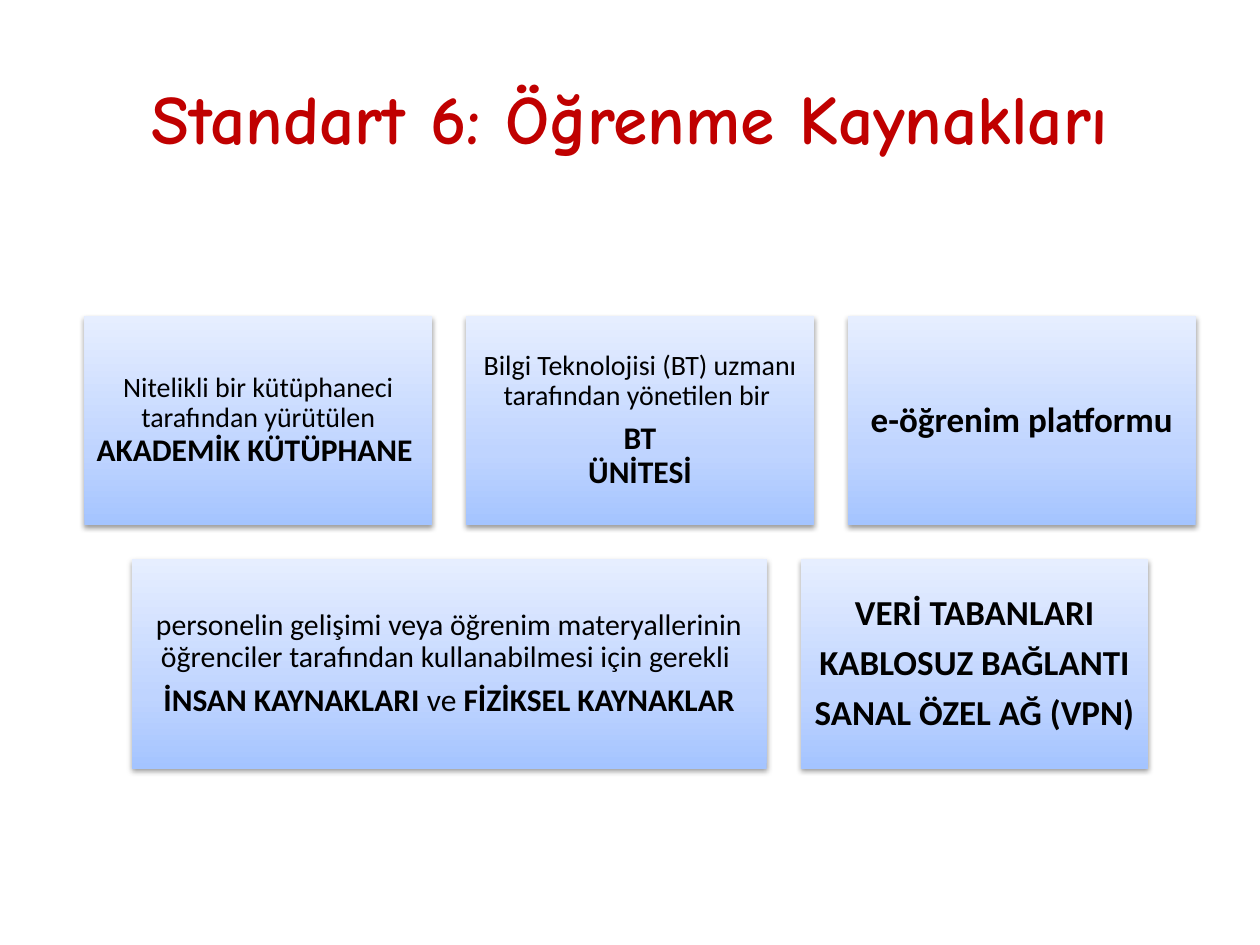
import copy
from typing import NamedTuple

import lxml.etree
import pptx
import pptx.dml.color
import pptx.enum.shapes
import pptx.enum.text
import pptx.oxml
import pptx.oxml.ns
import pptx.util

Inches = pptx.util.Inches
Pt = pptx.util.Pt

COLORS = {
    "title": "C00000",
    "text": "000000",
    "shadow": "000000",
    "bottom": "A4C4FF",
    "middle": "BFD4FF",
    "top": "E6EEFF",
}
GRADIENT = [(0, "bottom"), (0.35, "middle"), (1, "top")]
CENTER, TOP, HEIGHT, GAP = 5.08, 2.51, 1.66, 0.27
NARROW, WIDE = 2.76, 5.04


class Span(NamedTuple):
    text: str
    size: float
    bold: bool = False


class Card(NamedTuple):
    width: float
    inset: float
    paragraphs: list[list[Span]]


ROWS = [
    [
        Card(NARROW, 0.07, [[
            Span("Nitelikli bir kütüphaneci tarafından yürütülen ", 16),
            Span("AKADEMİK KÜTÜPHANE ", 18, True),
        ]]),
        Card(NARROW, 0.07, [
            [Span("Bilgi Teknolojisi (BT) uzmanı tarafından yönetilen bir ", 16)],
            [Span("BT\nÜNİTESİ", 18, True)],
        ]),
        Card(NARROW, 0.08, [[Span("e-öğrenim platformu", 20, True)]]),
    ],
    [
        Card(WIDE, 0.07, [
            [Span("personelin gelişimi veya öğrenim materyallerinin\n"
                  "öğrenciler tarafından kullanabilmesi için gerekli ", 17)],
            [
                Span("İNSAN KAYNAKLARI", 18, True),
                Span(" ve ", 18),
                Span("FİZİKSEL KAYNAKLAR", 18, True),
            ],
        ]),
        Card(NARROW, 0.08, [
            [Span("VERİ TABANLARI", 20, True)],
            [Span("KABLOSUZ BAĞLANTI", 20, True)],
            [Span("SANAL ÖZEL AĞ (VPN)", 20, True)],
        ]),
    ],
]


def format_run(r, font: str, size: float, bold: bool, color: str) -> None:
    r.font.name = font
    r.font.size = Pt(size)
    r.font.bold = bold
    r.font.color.rgb = pptx.dml.color.RGBColor.from_string(COLORS[color])


def fill_gradient(sp) -> None:
    sp.fill.gradient()
    sp.fill.gradient_angle = 90
    stops = sp._element.spPr.find(".//" + pptx.oxml.ns.qn("a:gsLst"))
    stops.append(copy.deepcopy(stops[-1]))
    for stop, (position, color) in zip(sp.fill.gradient_stops, GRADIENT):
        stop.position = position
        stop.color.rgb = pptx.dml.color.RGBColor.from_string(COLORS[color])


def add_shadow(sp) -> None:
    sp.shadow.inherit = False
    effects = sp._element.spPr.find(pptx.oxml.ns.qn("a:effectLst"))
    effects.append(pptx.oxml.parse_xml(
        f'<a:outerShdw {pptx.oxml.ns.nsdecls("a")} blurRad="{Pt(3.1)}" '
        f'dist="{Pt(1.6)}" dir="5400000" rotWithShape="0">'
        f'<a:srgbClr val="{COLORS["shadow"]}"><a:alpha val="38000"/></a:srgbClr>'
        '</a:outerShdw>'
    ))


def add_span(p, span: Span) -> None:
    for i, line in enumerate(span.text.split("\n")):
        if i:
            p.add_line_break()
        r = p.add_run()
        r.text = line
        format_run(r, "Calibri", span.size, span.bold, "text")


def add_card(s, card: Card, left: float, top: float) -> None:
    sp = s.shapes.add_shape(
        pptx.enum.shapes.MSO_SHAPE.RECTANGLE,
        Inches(left), Inches(top), Inches(card.width), Inches(HEIGHT),
    )
    fill_gradient(sp)
    sp.line.fill.background()
    add_shadow(sp)
    tf = sp.text_frame
    tf.word_wrap = True
    tf.vertical_anchor = pptx.enum.text.MSO_ANCHOR.MIDDLE
    tf.margin_left = tf.margin_right = Inches(card.inset)
    tf.margin_top = tf.margin_bottom = Inches(card.inset)
    for i, spans in enumerate(card.paragraphs):
        p = tf.add_paragraph() if i else tf.paragraphs[0]
        p.alignment = pptx.enum.text.PP_ALIGN.CENTER
        p.line_spacing = 0.9
        p.space_after = Pt(0.35 * spans[0].size)
        for span in spans:
            add_span(p, span)


def add_row(s, cards: list[Card], top: float) -> None:
    width = sum(card.width for card in cards) + GAP * (len(cards) - 1)
    left = CENTER - width / 2
    for card in cards:
        add_card(s, card, left, top)
        left += card.width + GAP


def add_title(s, text: str) -> None:
    title = s.shapes.title
    title.left, title.top = Inches(0.5), Inches(0.3)
    title.width, title.height = Inches(9), Inches(1.25)
    tf = title.text_frame
    tf.text = text
    tf.vertical_anchor = pptx.enum.text.MSO_ANCHOR.MIDDLE
    p = tf.paragraphs[0]
    p.alignment = pptx.enum.text.PP_ALIGN.CENTER
    format_run(p.runs[0], "Comic Neue", 39.6, True, "title")


def main() -> None:
    prs = pptx.Presentation()
    prs.slide_width, prs.slide_height = Inches(10), Inches(7.5)
    s = prs.slides.add_slide(prs.slide_layouts[5])
    add_title(s, "Standart 6: Öğrenme Kaynakları")
    for i, cards in enumerate(ROWS):
        add_row(s, cards, TOP + i * (HEIGHT + GAP))
    prs.save("out.pptx")


if __name__ == "__main__":
    main()
